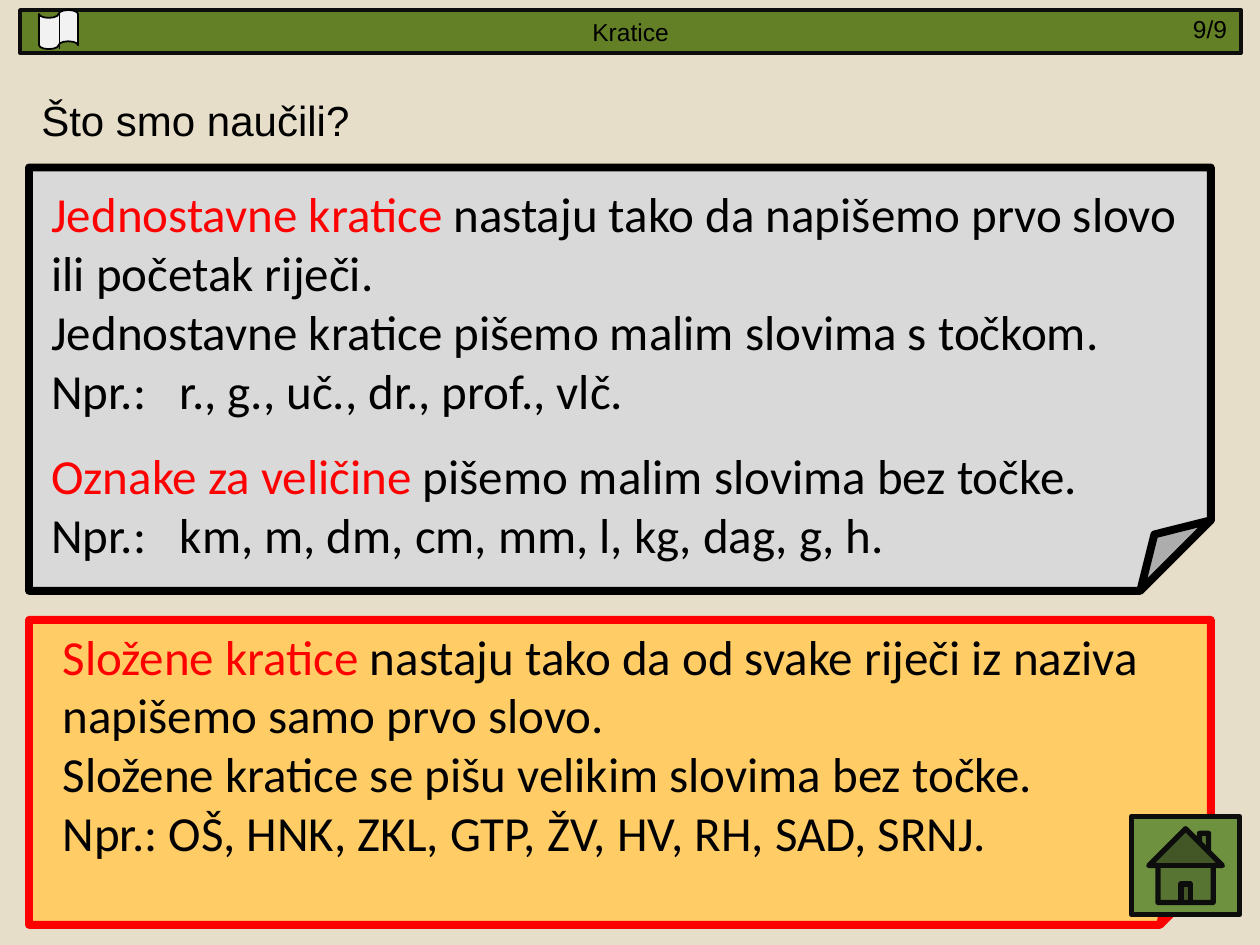
from lxml.etree import SubElement
from pptx import Presentation
from pptx.dml.color import RGBColor
from pptx.enum.shapes import MSO_CONNECTOR, MSO_SHAPE
from pptx.enum.text import MSO_ANCHOR, MSO_AUTO_SIZE, PP_ALIGN
from pptx.oxml.ns import qn
from pptx.util import Inches, Pt

COLORS = {
    "background": "E7DEC9",
    "header": "638026",
    "outline": "0D0D0D",
    "text": "000000",
    "accent": "FF0000",
    "simple_note": "D9D9D9",
    "compound_note": "FFCC66",
    "home": "6E913F",
    "book": "F2F2F2",
}


def color(name):
    return RGBColor.from_string(COLORS[name])


def write_text(frame, paragraphs, font="Calibri", size=28, align=PP_ALIGN.LEFT, wrap=True, tab=None):
    frame.word_wrap = wrap
    frame.auto_size = MSO_AUTO_SIZE.SHAPE_TO_FIT_TEXT
    for index, runs in enumerate(paragraphs):
        paragraph = frame.paragraphs[0] if index == 0 else frame.add_paragraph()
        paragraph.alignment = align
        for text, color_name in runs:
            run = paragraph.add_run()
            run.text = text
            run.font.name = font
            run.font.size = Pt(size)
            run.font.color.rgb = color(color_name)
        if tab and any("\t" in text for text, _ in runs):
            properties = paragraph._p.get_or_add_pPr()
            tab_list = SubElement(properties, qn("a:tabLst"))
            SubElement(tab_list, qn("a:tab"), pos=str(Inches(tab)), algn="l")


def plain(*lines):
    return [[(line, "text")] for line in lines]


def lesson(term, explanation, *lines):
    return [[(term + " ", "accent"), (explanation, "text")]] + plain(*lines)


class SlideBuilder:
    def __init__(self, slide):
        self.slide = slide
        slide.background.fill.solid()
        slide.background.fill.fore_color.rgb = color("background")

    def shape(self, kind, left, top, width, height, fill, line, weight):
        shape = self.slide.shapes.add_shape(
            kind, Inches(left), Inches(top), Inches(width), Inches(height))
        shape.shadow.inherit = False
        shape.fill.solid()
        shape.fill.fore_color.rgb = color(fill)
        shape.line.color.rgb = color(line)
        shape.line.width = Pt(weight)
        return shape

    def text(self, left, top, width, height, paragraphs, **style):
        box = self.slide.shapes.add_textbox(
            Inches(left), Inches(top), Inches(width), Inches(height))
        write_text(box.text_frame, paragraphs, **style)

    def line(self, start_x, start_y, end_x, end_y, line, weight):
        connector = self.slide.shapes.add_connector(
            MSO_CONNECTOR.STRAIGHT, Inches(start_x), Inches(start_y), Inches(end_x), Inches(end_y))
        connector.line.color.rgb = color(line)
        connector.line.width = Pt(weight)
        SubElement(connector._element.spPr, qn("a:effectLst"))


def main():
    presentation = Presentation()
    presentation.slide_width = Inches(10)
    presentation.slide_height = Inches(7.5)
    builder = SlideBuilder(presentation.slides.add_slide(presentation.slide_layouts[6]))

    header = builder.shape(MSO_SHAPE.RECTANGLE, 0.16, 0.08, 9.69, 0.34, "header", "outline", 2.25)
    header.text_frame.vertical_anchor = MSO_ANCHOR.MIDDLE
    write_text(header.text_frame, plain("Kratice"), font="Arial", size=14, align=PP_ALIGN.CENTER)
    builder.text(9.37, 0.06, 0.47, 0.34, plain("9/9"), font="Arial", size=14, wrap=False)
    builder.text(0.23, 0.7, 9.53, 0.51, plain("Što smo naučili?"), font="Arial", size=24)

    builder.shape(MSO_SHAPE.FOLDED_CORNER, 0.23, 1.33, 9.38, 3.36, "simple_note", "text", 4.5)
    builder.text(0.31, 1.41, 9.53, 1.99, lesson(
        "Jednostavne kratice",
        "nastaju tako da napišemo prvo slovo",
        "ili početak riječi.",
        "Jednostavne kratice pišemo malim slovima s točkom.",
        "Npr.:\tr., g., uč., dr., prof., vlč."), tab=1.02)
    builder.text(0.31, 3.49, 9.53, 1.04, lesson(
        "Oznake za veličine",
        "pišemo malim slovima bez točke.",
        "Npr.:\tkm, m, dm, cm, mm, l, kg, dag, g, h."), tab=1.02)

    builder.shape(MSO_SHAPE.FOLDED_CORNER, 0.23, 4.92, 9.38, 2.42, "compound_note", "accent", 4.5)
    builder.text(0.4, 4.92, 9.13, 1.99, lesson(
        "Složene kratice",
        "nastaju tako da od svake riječi iz naziva napišemo samo prvo slovo.",
        "Složene kratice se pišu velikim slovima bez točke.",
        "Npr.: OŠ, HNK, ZKL, GTP, ŽV, HV, RH, SAD, SRNJ."))

    builder.shape(MSO_SHAPE.ACTION_BUTTON_HOME, 8.98, 6.48, 0.86, 0.78, "home", "outline", 3)
    builder.shape(MSO_SHAPE.FLOWCHART_PUNCHED_TAPE, 0.31, 0.08, 0.31, 0.31, "book", "text", 1)
    builder.line(0.47, 0.39, 0.47, 0.11, "text", 0.75)

    presentation.save("out.pptx")


if __name__ == "__main__":
    main()
